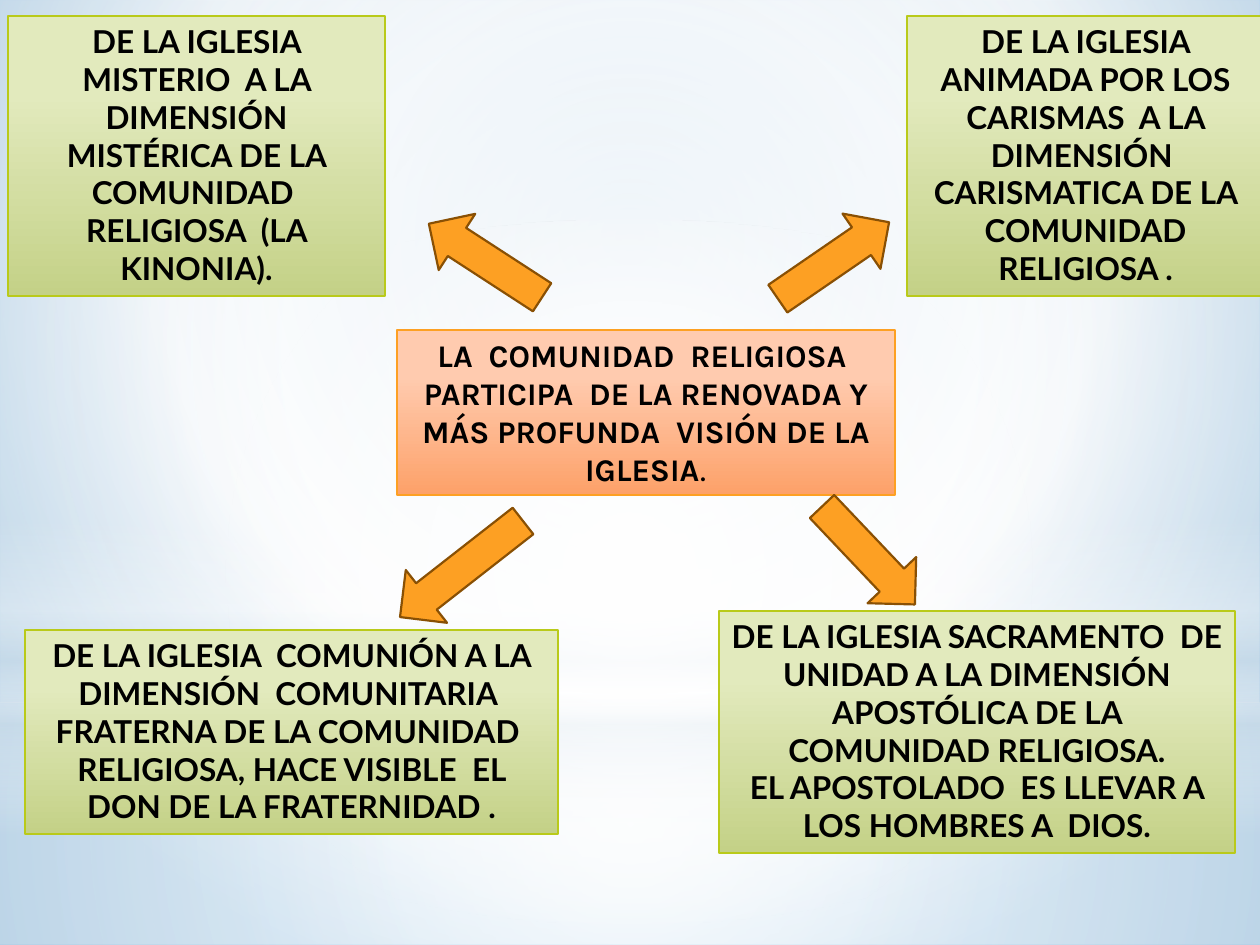
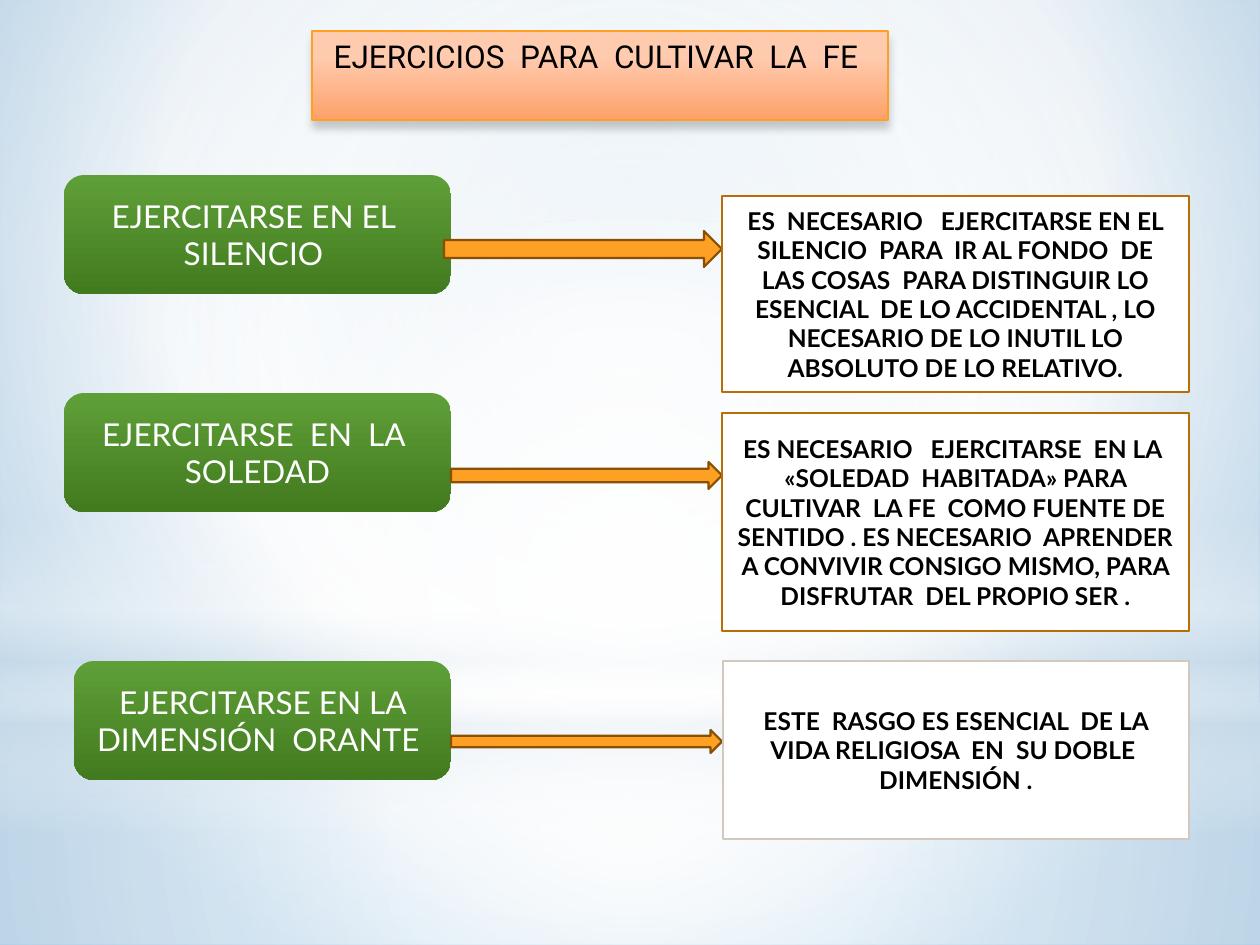
from lxml.etree import SubElement
from pptx import Presentation
from pptx.dml.color import RGBColor
from pptx.enum.shapes import MSO_SHAPE
from pptx.enum.text import MSO_ANCHOR, MSO_AUTO_SIZE, PP_ALIGN
from pptx.oxml.ns import qn
from pptx.util import Pt

PX = 914400 / 126
TOP, MID = MSO_ANCHOR.TOP, MSO_ANCHOR.MIDDLE
RECT, ROUND = MSO_SHAPE.RECTANGLE, MSO_SHAPE.ROUNDED_RECTANGLE
UP, RIGHT = MSO_SHAPE.UP_ARROW, MSO_SHAPE.RIGHT_ARROW

PEACH = [(28, "FFCBAF"), (100, "FDA169")]
LIME = [(28, "E2EABD"), (100, "C4D187")]
GREEN = [(0, "5F9F38"), (100, "427B1F")]
WHITE, BLACK, MIST, PALE = "FFFFFF", "000000", "CCDDEA", "D3C8BE"
AMBER, BROWN, OLIVE, OCHRE = "FDA023", "895004", "B9CA1A", "B96D05"
CORE = (50, 50, 50, 50)


def paint(host, fill, to=None):
    """Fill with a hex colour, or with stops (position, hex, opacity).

    Stops run downwards, or round the rectangle `to` (left, top, right, bottom).
    """
    host.fill.solid()
    if isinstance(fill, str):
        host.fill.fore_color.rgb = RGBColor.from_string(fill)
        return
    solid = next(host.element.iter(qn("a:solidFill")))
    grad = SubElement(solid.getparent(), qn("a:gradFill"), rotWithShape="1")
    solid.getparent().replace(solid, grad)
    stops = SubElement(grad, qn("a:gsLst"))
    for pos, tint, *alpha in fill:
        stop = SubElement(stops, qn("a:gs"), pos=str(pos * 1000))
        color = SubElement(stop, qn("a:srgbClr"), val=tint)
        for part in alpha:
            SubElement(color, qn("a:alpha"), val=str(part * 1000))
    if to:
        ring = SubElement(grad, qn("a:path"), path="circle")
        sides = {side: str(n * 1000) for side, n in zip("ltrb", to)}
        SubElement(ring, qn("a:fillToRect"), **sides)
    else:
        SubElement(grad, qn("a:lin"), ang="5400000", scaled="0")


def write(shape, text, size=18, font="Lato", color=BLACK, bold=False, anchor=TOP):
    frame = shape.text_frame
    frame.word_wrap = True
    frame.auto_size = MSO_AUTO_SIZE.NONE
    frame.vertical_anchor = anchor
    for i, line in enumerate(text.split("\n")):
        para = frame.add_paragraph() if i else frame.paragraphs[0]
        para.alignment = PP_ALIGN.CENTER
        run = para.add_run()
        run.text = line
        run.font.size = Pt(size)
        run.font.name = font
        run.font.bold = bold
        paint(run.font, color)


deck = Presentation()
deck.slide_width, deck.slide_height = round(1260 * PX), round(945 * PX)
first, second = [deck.slides.add_slide(deck.slide_layouts[5]) for _ in range(2)]

# Backdrop, held by the master
master = deck.slide_master
paint(master.background, [(0, "BCD5E8"), (60, WHITE), (100, "82B6DE")], (20, 10, 20, 60))
veils = [
    (RECT, (0, 703, 1260, 242), [(0, WHITE, 91), (37, WHITE, 76), (100, MIST, 79)], CORE),
    (RECT, (0, 0, 1260, 703), [(0, WHITE, 89), (48, WHITE, 62), (100, MIST, 79)], CORE),
    (RECT, (0, 519, 1260, 315), [(0, WHITE, 0), (29, WHITE, 30), (45, MIST, 40),
                                 (55, WHITE, 26), (65, MIST, 60), (100, WHITE, 0)], None),
    (MSO_SHAPE.OVAL, (0, 220, 1260, 703), [(0, WHITE, 100), (56, WHITE, 0)], CORE),
]
for i, (kind, at, fill, to) in enumerate(veils):
    veil = first.shapes.add_shape(kind, *[round(n * PX) for n in at])
    veil.shadow.inherit = False
    paint(veil, fill, to)
    veil.line.fill.background()
    veil.element.nvSpPr.cNvPr.set("id", str(50 + i))
    master.element.cSld.spTree.insert(2 + i, veil.element)

# Titles
titles = [
    (first, (397, 330, 498, 165), "Karla", True,
     "LA  COMUNIDAD  RELIGIOSA  PARTICIPA  DE LA RENOVADA Y MÁS PROFUNDA  VISIÓN DE LA IGLESIA"),
    (second, (312, 31, 576, 89), "Roboto", False, "EJERCICIOS  PARA  CULTIVAR  LA  FE "),
]
for slide, at, font, bold, text in titles:
    title = slide.shapes.title
    title.left, title.top, title.width, title.height = [round(n * PX) for n in at]
    title.shadow.inherit = False
    paint(title, PEACH)
    paint(title.line, AMBER)
    title.line.width = Pt(0.75)
    write(title, text, font=font, bold=bold)

write(first.shapes.title, ".")

effects = second.shapes.title.element.spPr.find(qn("a:effectLst"))
shade = SubElement(effects, qn("a:outerShdw"), blurRad=str(Pt(5)), dist=str(Pt(4)),
                   dir="5400000", rotWithShape="0")
SubElement(SubElement(shade, qn("a:srgbClr"), val=BLACK), qn("a:alpha"), val="20000")

# Looks: fill, line colour, line width, text format
NOTE = dict(size=14, bold=True, anchor=MID)
LOOKS = {
    "view": (LIME, OLIVE, 0.75, dict(bold=True)),
    "step": (GREEN, None, 0, dict(color=WHITE, anchor=MID)),
    "note": (WHITE, OCHRE, 1.25, NOTE),
    "faint": (WHITE, PALE, 0.75, NOTE),
    "arrow": (AMBER, BROWN, 1.25, {}),
}

views = [
    ((8, 16, 377, 280), "DE LA IGLESIA MISTERIO  A LA DIMENSIÓN MISTÉRICA DE LA COMUNIDAD  "
     "RELIGIOSA  (LA KINONIA)."),
    ((25, 630, 533, 204), "DE LA IGLESIA  COMUNIÓN A LA DIMENSIÓN  COMUNITARIA  FRATERNA DE LA "
     "COMUNIDAD  RELIGIOSA, HACE VISIBLE  EL DON DE LA FRATERNIDAD ."),
    ((907, 16, 357, 280), "DE LA IGLESIA ANIMADA POR LOS CARISMAS  A LA DIMENSIÓN  CARISMATICA "
     "DE LA COMUNIDAD RELIGIOSA ."),
    ((719, 611, 516, 242), "DE LA IGLESIA SACRAMENTO  DE UNIDAD A LA DIMENSIÓN APOSTÓLICA DE LA "
     "COMUNIDAD RELIGIOSA.\nEL APOSTOLADO  ES LLEVAR A LOS HOMBRES A  DIOS."),
]
turns = [((800, 193, 67, 135), 55.5), ((452, 193, 67, 135), 303),
         ((428, 491, 67, 156), 232), ((835, 488, 67, 135), 136.5)]
steps = [
    ((64, 175, 387, 119), "EJERCITARSE EN EL  SILENCIO "),
    ((64, 393, 387, 119), "EJERCITARSE  EN  LA  SOLEDAD"),
    ((74, 661, 377, 119), "EJERCITARSE EN LA DIMENSIÓN  ORANTE "),
]
links = [(444, 231, 278, 36), (451, 462, 271, 27), (451, 730, 271, 23)]
notes = [
    ("note", (722, 196, 467, 196), "ES  NECESARIO   EJERCITARSE EN EL SILENCIO  PARA  IR AL "
     "FONDO  DE LAS COSAS  PARA DISTINGUIR LO ESENCIAL  DE LO ACCIDENTAL , LO NECESARIO DE LO "
     "INUTIL LO ABSOLUTO DE LO RELATIVO."),
    ("note", (722, 413, 467, 218), "ES NECESARIO   EJERCITARSE  EN LA  «SOLEDAD  HABITADA» PARA "
     "CULTIVAR  LA FE  COMO FUENTE DE SENTIDO . ES NECESARIO  APRENDER A CONVIVIR CONSIGO "
     "MISMO, PARA DISFRUTAR  DEL PROPIO SER ."),
    ("faint", (723, 661, 466, 178), "ESTE  RASGO ES ESENCIAL  DE LA VIDA RELIGIOSA  EN  SU "
     "DOBLE  DIMENSIÓN ."),
]

items = [(first, RECT, "view", at, 0, text) for at, text in views]
items += [(first, UP, "arrow", at, turn, "") for at, turn in turns]
items += [(second, ROUND, "step", at, 0, text) for at, text in steps]
items += [(second, RIGHT, "arrow", at, 0, "") for at in links]
items += [(second, RECT, look, at, 0, text) for look, at, text in notes]

for slide, kind, look, at, turn, text in items:
    fill, line, width, form = LOOKS[look]
    shape = slide.shapes.add_shape(kind, *[round(n * PX) for n in at])
    shape.shadow.inherit = False
    shape.rotation = turn
    paint(shape, fill)
    if line:
        paint(shape.line, line)
        shape.line.width = Pt(width)
    else:
        shape.line.fill.background()
    if text:
        write(shape, text, **form)

deck.save("out.pptx")
